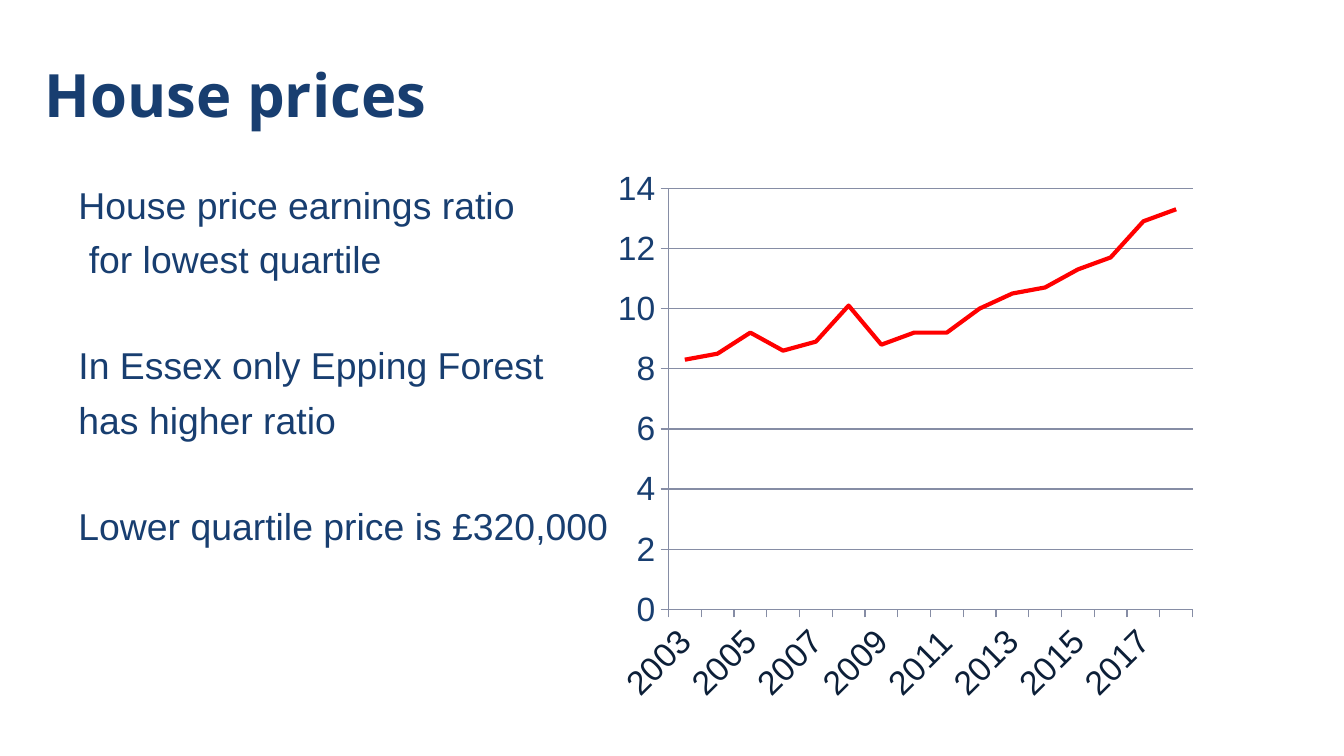
from lxml import etree
from pptx import Presentation
from pptx.chart.data import CategoryChartData
from pptx.dml.color import RGBColor
from pptx.enum.chart import XL_CHART_TYPE as ChartType, XL_TICK_MARK as TickMark
from pptx.enum.text import MSO_ANCHOR as Anchor
from pptx.oxml import parse_xml
from pptx.oxml.ns import nsdecls, qn
from pptx.util import Pt

PX = 9525  # EMU in one px, at 96 px to the inch
COLORS = {"navy": "183E70", "ink": "0C1F38", "grid": "868DA5", "red": "FF0000"}

TITLE = "House prices"
GROUPS = [
    ["House price earnings ratio", " for lowest quartile"],
    ["In Essex only Epping Forest", "has higher ratio"],
    ["Lower quartile price is £320,000"],
]
FIRST_YEAR = 2003
RATIOS = [8.3, 8.5, 9.2, 8.6, 8.9, 10.1, 8.8, 9.2,
          9.2, 10, 10.5, 10.7, 11.3, 11.7, 12.9, 13.3]
PLOT = {"x": 0.166, "y": 0.033, "w": 0.687, "h": 0.751}  # shares of the chart
LINE_GAP, GROUP_GAP = 5, 33  # points before a paragraph


def color(name):
    return RGBColor.from_string(COLORS[name])


def style(font, name, size, shade, bold=False):
    font.name, font.size, font.bold = name, Pt(size), bold
    font.color.rgb = color(shade)


def add_box(page, left, top, width, height, anchor):
    box = page.shapes.add_textbox(left * PX, top * PX, width * PX, height * PX)
    frame = box.text_frame
    frame.word_wrap = True
    frame.vertical_anchor = anchor
    frame.margin_left = frame.margin_right = 10 * PX
    frame.margin_top = frame.margin_bottom = 10 * PX
    return frame


def add_title(page):
    frame = add_box(page, 22, 22, 864, 90, Anchor.MIDDLE)
    frame.text = TITLE
    style(frame.paragraphs[0].runs[0].font, "Open Sans", 32, "navy", True)


def add_body(page):
    frame = add_box(page, 22, 120, 914, 407, Anchor.TOP)
    frame.margin_left = 34 * PX
    lines = [(line, LINE_GAP if place else GROUP_GAP)
             for group in GROUPS for place, line in enumerate(group)]
    frame.text = "\n".join(line for line, _ in lines)
    for index, (para, (_, gap)) in enumerate(zip(frame.paragraphs, lines)):
        para.space_before = Pt(gap if index else 0)
        style(para.runs[0].font, "Arial", 20, "navy")


def fix_plot_area(chart):
    """Pin the inner plot area to the shares in PLOT."""
    area = chart._chartSpace.chart.plotArea
    for old in area.findall(qn("c:layout")):
        area.remove(old)
    sizes = "".join(f'<c:{key} val="{share}"/>' for key, share in PLOT.items())
    area.insert(0, parse_xml(
        f'<c:layout {nsdecls("c")}><c:manualLayout><c:layoutTarget val="inner"/>'
        f'<c:xMode val="edge"/><c:yMode val="edge"/>{sizes}'
        '</c:manualLayout></c:layout>'))


def slant_years(axis):
    """Turn the year labels by 45 degrees and show every second one."""
    element = axis._element
    element.find(qn("c:txPr")).find(qn("a:bodyPr")).set("rot", "-2700000")
    skip = etree.Element(qn("c:tickLblSkip"), val="2")
    element.find(qn("c:noMultiLvlLbl")).addprevious(skip)


def add_ratio_chart(page):
    data = CategoryChartData()
    data.categories = [str(FIRST_YEAR + step) for step in range(len(RATIOS))]
    data.add_series("Series 1", RATIOS)
    chart = page.shapes.add_chart(
        ChartType.LINE, 387 * PX, 121 * PX, 545 * PX, 401 * PX, data).chart
    chart.has_legend = chart.has_title = False
    style(chart.font, "Arial", 18, "navy")
    chart.plots[0].vary_by_categories = False

    series = chart.plots[0].series[0]
    series.smooth = False
    series.format.line.color.rgb = color("red")
    series.format.line.width = Pt(2.25)

    years, ratios = chart.category_axis, chart.value_axis
    ratios.minimum_scale, ratios.maximum_scale, ratios.major_unit = 0, 14, 2
    ratios.has_major_gridlines = True
    for line in (years.format.line, ratios.format.line,
                 ratios.major_gridlines.format.line):
        line.color.rgb = color("grid")
        line.width = Pt(0.75)
    for axis, shade in ((years, "ink"), (ratios, "navy")):
        axis.major_tick_mark = TickMark.OUTSIDE
        axis.minor_tick_mark = TickMark.NONE
        style(axis.tick_labels.font, "Arial", 18, shade)
    slant_years(years)
    fix_plot_area(chart)


def main():
    deck = Presentation()
    deck.slide_width, deck.slide_height = 960 * PX, 540 * PX
    page = deck.slides.add_slide(deck.slide_layouts[6])
    add_title(page)
    add_body(page)
    add_ratio_chart(page)
    deck.save("out.pptx")


if __name__ == "__main__":
    main()
